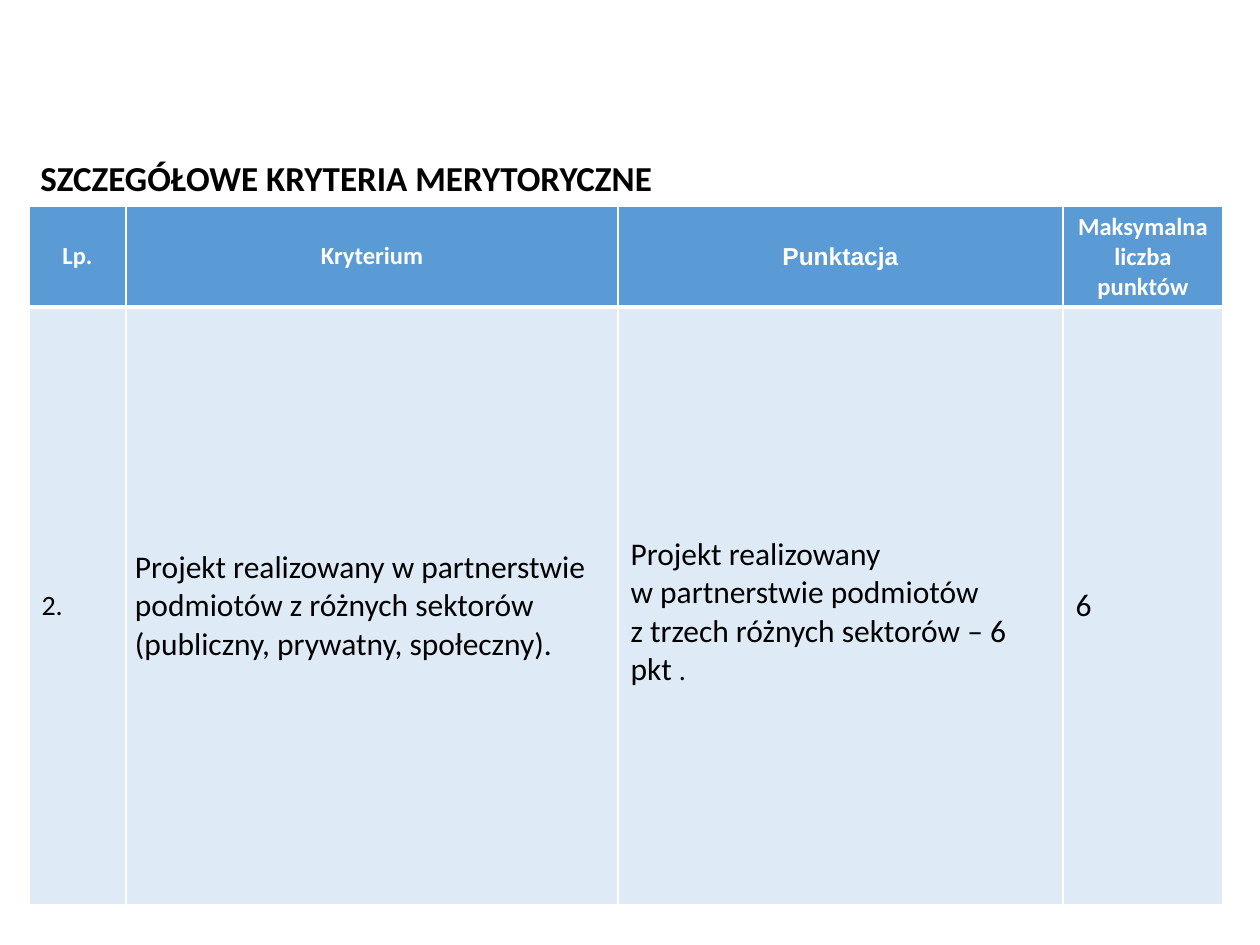
from lxml import etree
from pptx import Presentation
from pptx.dml.color import RGBColor
from pptx.enum.text import MSO_ANCHOR, PP_ALIGN
from pptx.oxml.ns import qn
from pptx.util import Emu, Pt

COLORS = {"header": "5B9BD5", "body": "DEEBF7", "white": "FFFFFF", "black": "000000"}
SCALE = 914400 / 126


def px(n):
    return Emu(round(n * SCALE))


def write(p, text, size=18, font="Calibri", color="black", bold=False, align=PP_ALIGN.LEFT):
    p.alignment = align
    for i, line in enumerate(text.split("\n")):
        if i:
            p.add_line_break()
        r = p.add_run()
        r.text = line
        r.font.name = font
        r.font.size = Pt(size)
        r.font.bold = bold
        r.font.color.rgb = RGBColor.from_string(COLORS[color])


prs = Presentation()
prs.slide_width, prs.slide_height = px(1260), px(945)
s = prs.slides.add_slide(prs.slide_layouts[6])

# Heading
tf = s.shapes.add_textbox(px(28), px(150), px(1178), px(55)).text_frame
tf.word_wrap = True
tf.vertical_anchor = MSO_ANCHOR.MIDDLE
write(tf.paragraphs[0], "SZCZEGÓŁOWE KRYTERIA MERYTORYCZNE", size=20, bold=True)

# Criteria table
col_widths = [97, 492, 445, 160]
row_heights = [101, 598]
table = s.shapes.add_table(2, 4, px(29), px(206), px(sum(col_widths)), px(sum(row_heights))).table
for col, width in zip(table.columns, col_widths):
    col.width = px(width)
for row, height in zip(table.rows, row_heights):
    row.height = px(height)

# Cell text: (text, format)
header = [
    ("Lp.", {}),
    ("Kryterium", {}),
    ("Punktacja", {"font": "Arial"}),
    ("Maksymalna liczba punktów", {}),
]
body = [
    ("2.", {"size": 16}),
    ("Projekt realizowany w partnerstwie podmiotów z różnych sektorów "
     "(publiczny, prywatny, społeczny).", {}),
    ("Projekt realizowany \nw partnerstwie podmiotów \nz trzech różnych sektorów – 6 pkt ", {}),
    ("6", {}),
]
header_format = {"size": 14, "color": "white", "bold": True, "align": PP_ALIGN.CENTER}

for row, (texts, fill, base) in enumerate([(header, "header", header_format), (body, "body", {})]):
    for col, (text, extra) in enumerate(texts):
        cell = table.cell(row, col)
        cell.vertical_anchor = MSO_ANCHOR.MIDDLE
        write(cell.text_frame.paragraphs[0], text, **{**base, **extra})

        # White borders, thicker between header and body
        tcPr = cell._tc.get_or_add_tcPr()
        for side in ("lnL", "lnR", "lnT", "lnB"):
            at_divider = (row, side) in ((0, "lnB"), (1, "lnT"))
            ln = etree.SubElement(tcPr, qn(f"a:{side}"), w=str(Pt(3 if at_divider else 1)))
            solid = etree.SubElement(ln, qn("a:solidFill"))
            etree.SubElement(solid, qn("a:srgbClr"), val=COLORS["white"])
        cell.fill.solid()
        cell.fill.fore_color.rgb = RGBColor.from_string(COLORS[fill])

# Body cells with their own insets and ending
criterion, points = table.cell(1, 1), table.cell(1, 2)
criterion.margin_left = criterion.margin_right = px(9)
criterion.margin_top = criterion.margin_bottom = 0
points.margin_top = px(19)
write(points.text_frame.paragraphs[0], ".", size=16)

prs.save("out.pptx")
